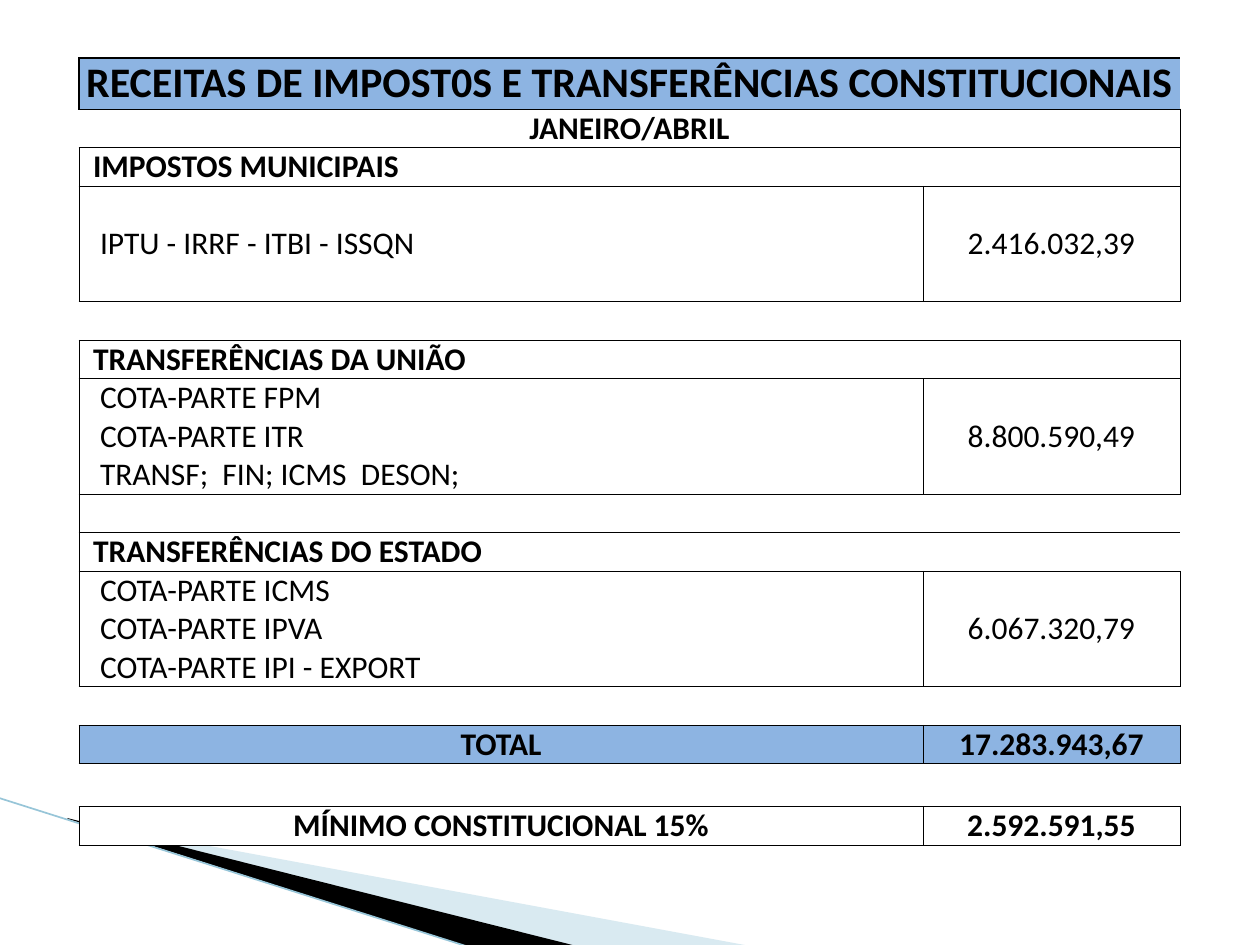
from dataclasses import dataclass

from lxml.etree import SubElement
from pptx import Presentation
from pptx.dml.color import RGBColor
from pptx.enum.text import MSO_ANCHOR as Anchor, PP_ALIGN as Align
from pptx.oxml.ns import qn
from pptx.util import Emu, Pt

EMU_PER_PX = 914400 / 126


def px(length: int) -> Emu:
    return Emu(round(length * EMU_PER_PX))


@dataclass(frozen=True)
class Theme:
    font: str = "Calibri"
    heading_size: int = 24
    body_size: int = 18
    ink: str = "000000"
    paper: str = "FFFFFF"
    highlight: str = "8DB4E2"
    wedge: str = "A0CBDC"
    wedge_opacity: int = 40
    accent_line: str = "97C5D8"


THEME = Theme()


@dataclass(frozen=True)
class Entry:
    text: str = ""
    edges: str = "LRTB"
    bold: bool = False
    size: int = THEME.body_size
    fill: str = THEME.paper
    indent: int | None = None  # None centres the text
    columns: int = 1
    rows: int = 1
    border: float = 0.5


@dataclass(frozen=True)
class Wedge:
    points: tuple[tuple[int, int], ...]
    color: str
    opacity: int = 100


WEDGES = (
    Wedge(((69, 820), (750, 946), (575, 946), (69, 819)), THEME.wedge, THEME.wedge_opacity),
    Wedge(((67, 818), (576, 946), (469, 947), (68, 819)), THEME.ink),
)
COLUMN_WIDTHS = (844, 257)
ROW_HEIGHT = 38
TALL_ROWS = {0: 51, 18: 43}


def heading(text: str, edges: str = "LRTB") -> list[Entry]:
    return [Entry(text, edges, bold=True, indent=14, columns=2)]


def gap(edges: str = "TB") -> list[Entry]:
    return [Entry(edges=edges, columns=2)]


def split_gap() -> list[Entry]:
    return [Entry(edges="TB"), Entry(edges="TB")]


def group(labels: tuple[str, str, str], amount: str) -> list[list[Entry]]:
    """Three boxed lines sharing one amount."""
    lines = [[Entry(label, edges, indent=21)] for label, edges in zip(labels, ("LRT", "LR", "LRB"))]
    lines[0].append(Entry(amount, rows=3))
    return lines


def result(label: str, amount: str, fill: str) -> list[Entry]:
    return [Entry(text, bold=True, fill=fill) for text in (label, amount)]


ROWS = [
    [Entry("RECEITAS DE IMPOST0S E TRANSFERÊNCIAS CONSTITUCIONAIS", "LTB", True,
           THEME.heading_size, THEME.highlight, columns=2, border=1)],
    [Entry("JANEIRO/ABRIL", "RTB", True, columns=2)],
    heading("IMPOSTOS MUNICIPAIS"),
    *group(("", "IPTU - IRRF - ITBI - ISSQN", ""), "2.416.032,39"),
    gap(),
    heading("TRANSFERÊNCIAS DA UNIÃO"),
    *group(("COTA-PARTE FPM", "COTA-PARTE ITR", "TRANSF;  FIN; ICMS  DESON;"), "8.800.590,49"),
    gap("LTB"),
    heading("TRANSFERÊNCIAS DO ESTADO", "LTB"),
    *group(("COTA-PARTE ICMS", "COTA-PARTE IPVA", "COTA-PARTE IPI - EXPORT"), "6.067.320,79"),
    split_gap(),
    result("TOTAL", "17.283.943,67", THEME.highlight),
    split_gap(),
    result("MÍNIMO CONSTITUCIONAL 15%", "2.592.591,55", THEME.paper),
]


def set_borders(cell, edges: str, width: float) -> None:
    properties = cell._tc.get_or_add_tcPr()
    for position, edge in enumerate("LRTB"):
        line = properties.makeelement(qn(f"a:ln{edge}"), {"w": str(Pt(width))})
        if edge in edges:
            fill = SubElement(line, qn("a:solidFill"))
            SubElement(fill, qn("a:srgbClr"), val=THEME.ink)
        else:
            SubElement(line, qn("a:noFill"))
        properties.insert(position, line)


def fill_cell(cell, entry: Entry) -> None:
    cell.margin_left = px(entry.indent or 0)
    cell.margin_right = cell.margin_top = cell.margin_bottom = 0
    cell.vertical_anchor = Anchor.MIDDLE if entry.indent is None else Anchor.BOTTOM
    cell.fill.solid()
    cell.fill.fore_color.rgb = RGBColor.from_string(entry.fill)
    set_borders(cell, entry.edges, entry.border)
    para = cell.text_frame.paragraphs[0]
    para.alignment = Align.CENTER if entry.indent is None else Align.LEFT
    if entry.text:
        para.add_run().text = entry.text
    font = para.font
    font.name, font.size, font.bold = THEME.font, Pt(entry.size), entry.bold
    font.color.rgb = RGBColor.from_string(THEME.ink)


def draw_wedge(page, wedge: Wedge) -> None:
    start, *others = wedge.points
    builder = page.shapes.build_freeform(*start, scale=EMU_PER_PX)
    builder.add_line_segments(others, close=True)
    shape = builder.convert_to_shape()
    shape.shadow.inherit = False
    shape.line.fill.background()
    shape.fill.solid()
    shape.fill.fore_color.rgb = RGBColor.from_string(wedge.color)
    if wedge.opacity < 100:
        color = shape.fill._xPr.find(qn("a:solidFill"))[0]
        SubElement(color, qn("a:alpha"), val=str(wedge.opacity * 1000))


def draw_accent_line(page) -> None:
    line = page.shapes.add_connector(1, px(-1), px(798), px(469), px(947))
    line.line.color.rgb = RGBColor.from_string(THEME.accent_line)
    line.line.width = Pt(0.95)
    SubElement(line._element.spPr, qn("a:effectLst"))


def draw_revenue_table(page) -> None:
    heights = [TALL_ROWS.get(index, ROW_HEIGHT) for index in range(len(ROWS))]
    table = page.shapes.add_table(len(ROWS), len(COLUMN_WIDTHS), px(79), px(58),
                                  px(sum(COLUMN_WIDTHS)), px(sum(heights))).table
    table.first_row = table.horz_banding = False
    for column, width in zip(table.columns, COLUMN_WIDTHS):
        column.width = px(width)
    for row, height in zip(table.rows, heights):
        row.height = px(height)
    for top, entries in enumerate(ROWS):
        for left, entry in enumerate(entries):
            cell = table.cell(top, left)
            bottom, right = top + entry.rows - 1, left + entry.columns - 1
            if (bottom, right) != (top, left):
                cell.merge(table.cell(bottom, right))
            for row in range(top, bottom + 1):
                for column in range(left, right + 1):
                    fill_cell(table.cell(row, column), entry if (row, column) == (top, left)
                              else Entry(edges=entry.edges, fill=entry.fill, border=entry.border))


def main() -> None:
    deck = Presentation()
    deck.slide_width, deck.slide_height = px(1260), px(945)
    page = deck.slides.add_slide(deck.slide_layouts[6])
    for wedge in WEDGES:
        draw_wedge(page, wedge)
    draw_accent_line(page)
    draw_revenue_table(page)
    deck.save("out.pptx")


if __name__ == "__main__":
    main()
